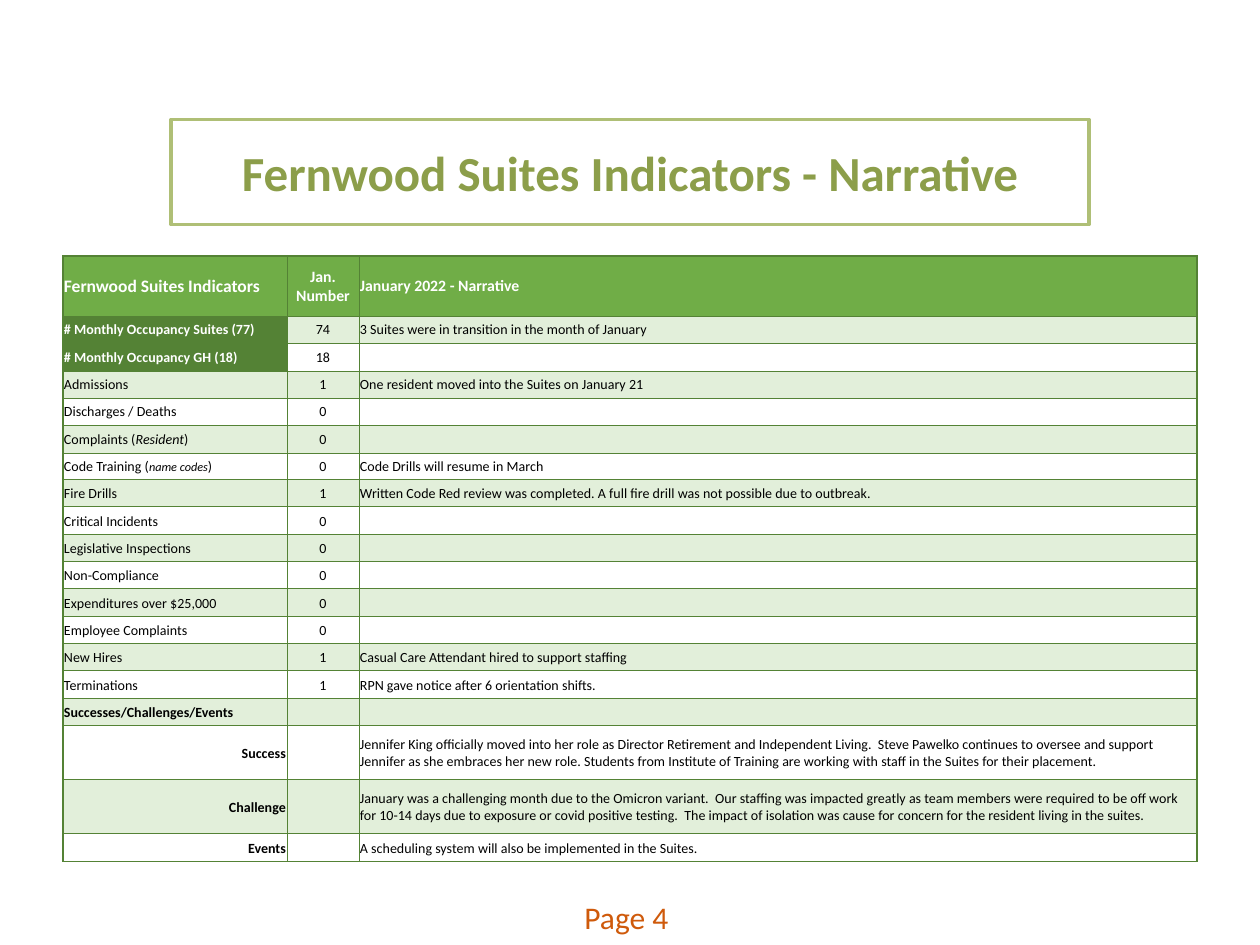
import pptx
import pptx.util
import pptx.dml.color
import pptx.enum.text
import pptx.oxml
import pptx.oxml.ns

PX = 914400 / 126
FONT = "Calibri"
HEX = {
    "white": "FFFFFF", "black": "000000", "title": "8C9E4A", "frame": "AFBF76",
    "head": "70AD47", "dark": "548235", "band": "E2EFDA", "page": "CF5A0B",
}
ALIGN = pptx.enum.text.PP_ALIGN
MID = pptx.enum.text.MSO_ANCHOR.MIDDLE


def px(*nums):
    return [pptx.util.Emu(round(n * PX)) for n in nums]


def add_run(para, text, size, color, bold=False, italic=False):
    run = para.add_run()
    run.text = text
    font = run.font
    font.name, font.size = FONT, pptx.util.Pt(size)
    font.bold, font.italic = bold, italic
    font.color.rgb = pptx.dml.color.RGBColor.from_string(HEX[color])


deck = pptx.Presentation()
deck.slide_width, deck.slide_height = px(1260, 945)
slide = deck.slides.add_slide(deck.slide_layouts[5])

# Page label
label = slide.shapes.add_textbox(*px(572, 892, 294, 50)).text_frame
label.word_wrap = True
add_run(label.paragraphs[0], "Page 4", 18, "page")

# Framed title
title = slide.shapes.title
title.left, title.top, title.width, title.height = px(171, 136, 918, 72)
title.fill.solid()
title.fill.fore_color.rgb = pptx.dml.color.RGBColor.from_string(HEX["white"])
title.line.color.rgb = pptx.dml.color.RGBColor.from_string(HEX["frame"])
title.line.width = pptx.util.Pt(2)
frame = title.text_frame
frame.auto_size = pptx.enum.text.MSO_AUTO_SIZE.SHAPE_TO_FIT_TEXT
frame.vertical_anchor = MID
frame.paragraphs[0].alignment = ALIGN.CENTER
add_run(frame.paragraphs[0], "Fernwood Suites Indicators - Narrative", 28, "title", True)

# Table content: indicator, number, narrative
ROWS = [
    ("Fernwood Suites Indicators", "Jan.\nNumber", "January 2022 - Narrative"),
    ("# Monthly Occupancy Suites (77)", "74",
     "3 Suites were in transition in the month of January"),
    ("# Monthly Occupancy GH (18)", "18", ""),
    ("Admissions", "1", "One resident moved into the Suites on January 21"),
    ("Discharges / Deaths", "0", ""),
    ("Complaints (|Resident|)", "0", ""),
    ("Code Training (|name codes|)", "0", "Code Drills will resume in March"),
    ("Fire Drills", "1", "Written Code Red review was completed. "
     "A full fire drill was not possible due to outbreak."),
    ("Critical Incidents", "0", ""),
    ("Legislative Inspections", "0", ""),
    ("Non-Compliance", "0", ""),
    ("Expenditures over $25,000", "0", ""),
    ("Employee Complaints", "0", ""),
    ("New Hires", "1", "Casual Care Attendant hired to support staffing"),
    ("Terminations", "1", "RPN gave notice after 6 orientation shifts."),
    ("Successes/Challenges/Events", "", ""),
    ("Success", "", "Jennifer King officially moved into her role as Director "
     "Retirement and Independent Living.  Steve Pawelko continues to oversee and "
     "support Jennifer as she embraces her new role. Students from Institute of "
     "Training are working with staff in the Suites for their placement."),
    ("Challenge", "", "January was a challenging month due to the Omicron variant.  "
     "Our staffing was impacted greatly as team members were required to be off work "
     "for 10-14 days due to exposure or covid positive testing.  The impact of "
     "isolation was cause for concern for the resident living in the suites."),
    ("Events", "", "A scheduling system will also be implemented in the Suites."),
]
WIDTHS = [224, 72, 838]
HEIGHTS = [60] + [27, 28, 27] * 5 + [54, 54, 28]
last = len(ROWS) - 1

table = slide.shapes.add_table(
    len(ROWS), 3, *px(63, 256, sum(WIDTHS), sum(HEIGHTS))).table
table.first_row = table.horz_banding = False
for col, wide in zip(table.columns, px(*WIDTHS)):
    col.width = wide
for row, high in zip(table.rows, px(*HEIGHTS)):
    row.height = high

for r, texts in enumerate(ROWS):
    for c, text in enumerate(texts):
        cell = table.cell(r, c)
        cell.vertical_anchor = MID
        cell.margin_left, cell.margin_top, cell.margin_right, cell.margin_bottom = px(1, 1, 1, 0)

        # Borders: heavier around the outside
        props = cell._tc.get_or_add_tcPr()
        edges = {"L": c == 0, "R": c == 2, "T": r == 0, "B": r == last}
        for side, outer in edges.items():
            props.append(pptx.oxml.parse_xml(
                f'<a:ln{side} {pptx.oxml.ns.nsdecls("a")} w="{12700 if outer else 6350}">'
                f'<a:solidFill><a:srgbClr val="{HEX["dark"]}"/></a:solidFill></a:ln{side}>'))

        # Fill: header, dark labels, then bands
        dark = c == 0 and r in (1, 2)
        fill = "head" if r == 0 else "dark" if dark else "band" if r % 2 else None
        if fill:
            cell.fill.solid()
            cell.fill.fore_color.rgb = pptx.dml.color.RGBColor.from_string(HEX[fill])
        else:
            cell.fill.background()

        # Text: parts between bars are italic
        para = cell.text_frame.paragraphs[0]
        if c == 1:
            para.alignment = ALIGN.CENTER
        elif c == 0 and r > 15:
            para.alignment = ALIGN.RIGHT
        size = 8 if r else 9 if c else 10
        color = "white" if r == 0 or dark else "black"
        bold = r == 0 or dark or (c == 0 and r >= 15)
        if not text:
            para._p.get_or_add_endParaRPr().set("sz", "800")
            continue
        for n, line in enumerate(text.split("\n")):
            if n:
                para.add_line_break()
            for k, part in enumerate(line.split("|")):
                small = part == "name codes"
                add_run(para, part, 7 if small else size, color, bold, k == 1)

deck.save("out.pptx")
